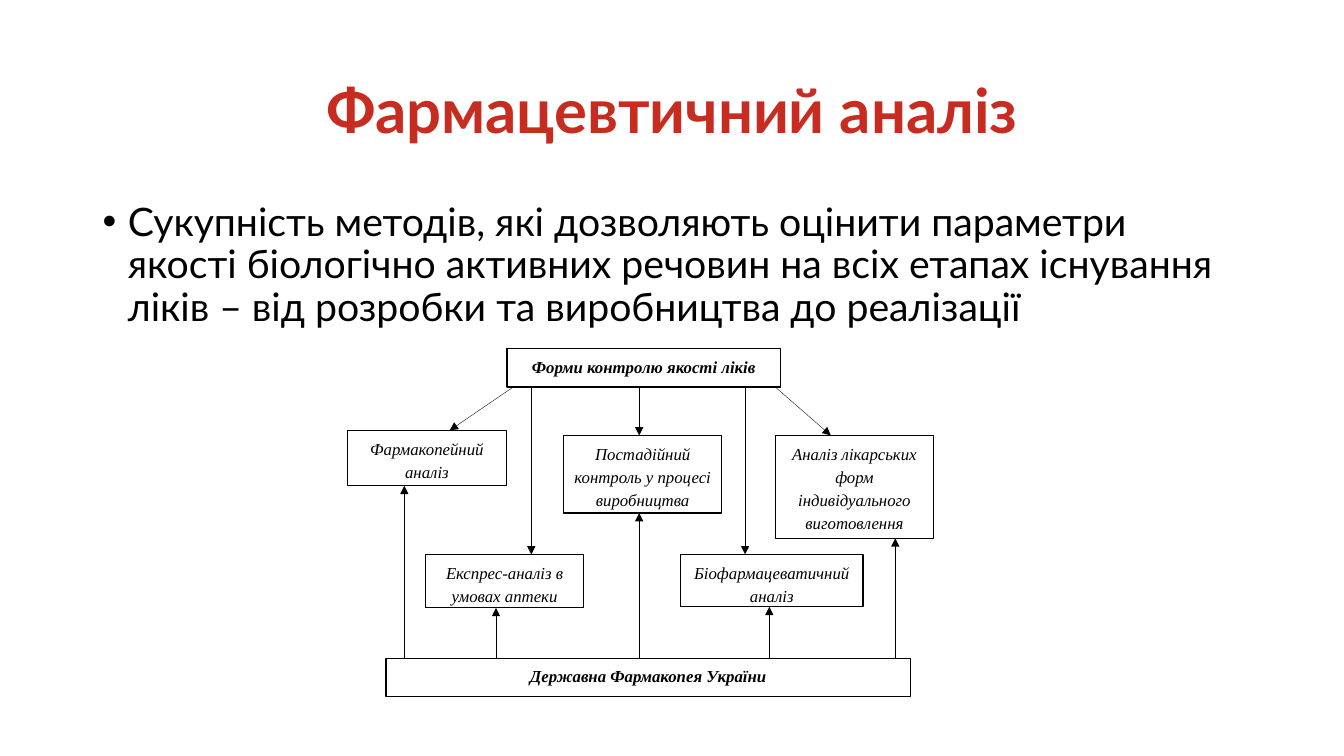
from lxml.etree import SubElement
from pptx import Presentation
from pptx.dml.color import RGBColor
from pptx.enum.shapes import MSO_CONNECTOR, MSO_SHAPE
from pptx.enum.text import MSO_ANCHOR, PP_ALIGN
from pptx.oxml.ns import qn
from pptx.util import Inches, Pt

# The slide is laid out on a grid of 0.1 inch cells; boxes are (col, row, cols, rows)
CELL = 0.1
TITLE_BOX = (9.2, 4, 115, 14.5)
DEFINITION_BOX = (9.2, 19.6, 115, 14.5)
DIAGRAM_BOX = (34.5, 34.6, 58.1, 34.5)
BLACK, WHITE, RED = "000000", "FFFFFF", "C72C21"

# Cells within the diagram
FRAMES = {
    "Форми контролю якості ліків": (15.8, 0, 27.1, 3.8),
    "Фармакопейний аналіз": (0, 8.1, 15.7, 5.5),
    "Постадійний контроль у процесі виробництва": (21.4, 8.6, 15.7, 7.7),
    "Аналіз лікарських форм індивідуального виготовлення": (42.4, 8.6, 15.7, 10.2),
    "Експрес-аналіз в умовах аптеки": (7.7, 20.4, 15.7, 5.3),
    "Біофармацеватичний аналіз": (33, 20.4, 18.1, 5.2),
    "Державна Фармакопея України": (3.8, 30.7, 52, 3.8),
}
CONTROL, PHARMACOPOEIAL, STAGED, INDIVIDUAL, EXPRESS, BIO, STATE = FRAMES

# Target frame: columns where the arrow from above starts and ends, column of the one from below
ARROWS = {
    PHARMACOPOEIAL: (16.4, 10.1, 5.6),
    STAGED: (28.9, 28.9, 28.9),
    INDIVIDUAL: (42.4, 47.9, 54.3),
    EXPRESS: (18.2, 18.2, 14.7),
    BIO: (39.4, 39.4, 41.8),
}


def cells(*counts):
    return [Inches(count * CELL) for count in counts]


def color(hex_string):
    return RGBColor.from_string(hex_string)


def write(frame, text, font, size, ink, bold=False, italic=False,
          align=PP_ALIGN.LEFT, spacing=0.9):
    frame.word_wrap = True
    paragraph = frame.paragraphs[0]
    paragraph.text = text
    paragraph.alignment = align
    paragraph.line_spacing = spacing
    run_font = paragraph.runs[0].font
    run_font.name, run_font.size = font, Pt(size)
    run_font.bold, run_font.italic = bold, italic
    run_font.color.rgb = color(ink)


def add_title(slide, box):
    frame = slide.shapes.add_textbox(*cells(*box)).text_frame
    frame.vertical_anchor = MSO_ANCHOR.MIDDLE
    write(frame, "Фармацевтичний аналіз", "Lato", 44, RED, bold=True,
          align=PP_ALIGN.CENTER)


def add_definition(slide, box):
    frame = slide.shapes.add_textbox(*cells(*box)).text_frame
    properties = frame.paragraphs[0]._p.get_or_add_pPr()
    properties.set("marL", str(Inches(0.25)))
    properties.set("indent", str(Inches(-0.25)))
    SubElement(properties, qn("a:buFont")).set("typeface", "Arial")
    SubElement(properties, qn("a:buChar")).set("char", "•")
    write(frame,
          "Сукупність методів, які дозволяють оцінити параметри якості "
          "біологічно активних речовин на всіх етапах існування ліків – "
          "від розробки та виробництва до реалізації", "Lato", 28, BLACK)


def add_frame(slide, box, text, heading):
    shape = slide.shapes.add_shape(MSO_SHAPE.RECTANGLE, *cells(*box))
    shape.shadow.inherit = False
    shape.fill.solid()
    shape.fill.fore_color.rgb = color(WHITE)
    shape.line.color.rgb = color(BLACK)
    shape.line.width = Pt(1 if heading else 0.75)
    shape.text_frame.vertical_anchor = MSO_ANCHOR.TOP
    write(shape.text_frame, text, "Times New Roman", 12, BLACK, bold=heading,
          italic=True, align=PP_ALIGN.CENTER, spacing=1.15)


def add_arrow(slide, start, end):
    arrow = slide.shapes.add_connector(MSO_CONNECTOR.STRAIGHT, *cells(*start, *end))
    arrow.line.color.rgb = color(BLACK)
    arrow.line.width = Pt(0.25)
    SubElement(arrow.line._get_or_add_ln(), qn("a:tailEnd")).set("type", "triangle")
    SubElement(arrow._element.spPr, qn("a:effectLst"))


def add_diagram(slide, box):
    left, top = box[:2]
    placed = {text: (left + col, top + row, cols, rows)
              for text, (col, row, cols, rows) in FRAMES.items()}
    for text, frame_box in placed.items():
        add_frame(slide, frame_box, text, text in (CONTROL, STATE))

    control_bottom = placed[CONTROL][1] + placed[CONTROL][3]
    state_top = placed[STATE][1]
    for target, (leave, arrive, rise) in ARROWS.items():
        _, target_top, _, target_rows = placed[target]
        add_arrow(slide, (left + leave, control_bottom), (left + arrive, target_top))
        add_arrow(slide, (left + rise, state_top),
                  (left + rise, target_top + target_rows))


def main():
    presentation = Presentation()
    presentation.slide_width, presentation.slide_height = Inches(13.33), Inches(7.5)
    slide = presentation.slides.add_slide(presentation.slide_layouts[6])
    add_title(slide, TITLE_BOX)
    add_definition(slide, DEFINITION_BOX)
    add_diagram(slide, DIAGRAM_BOX)
    presentation.save("out.pptx")


if __name__ == "__main__":
    main()
